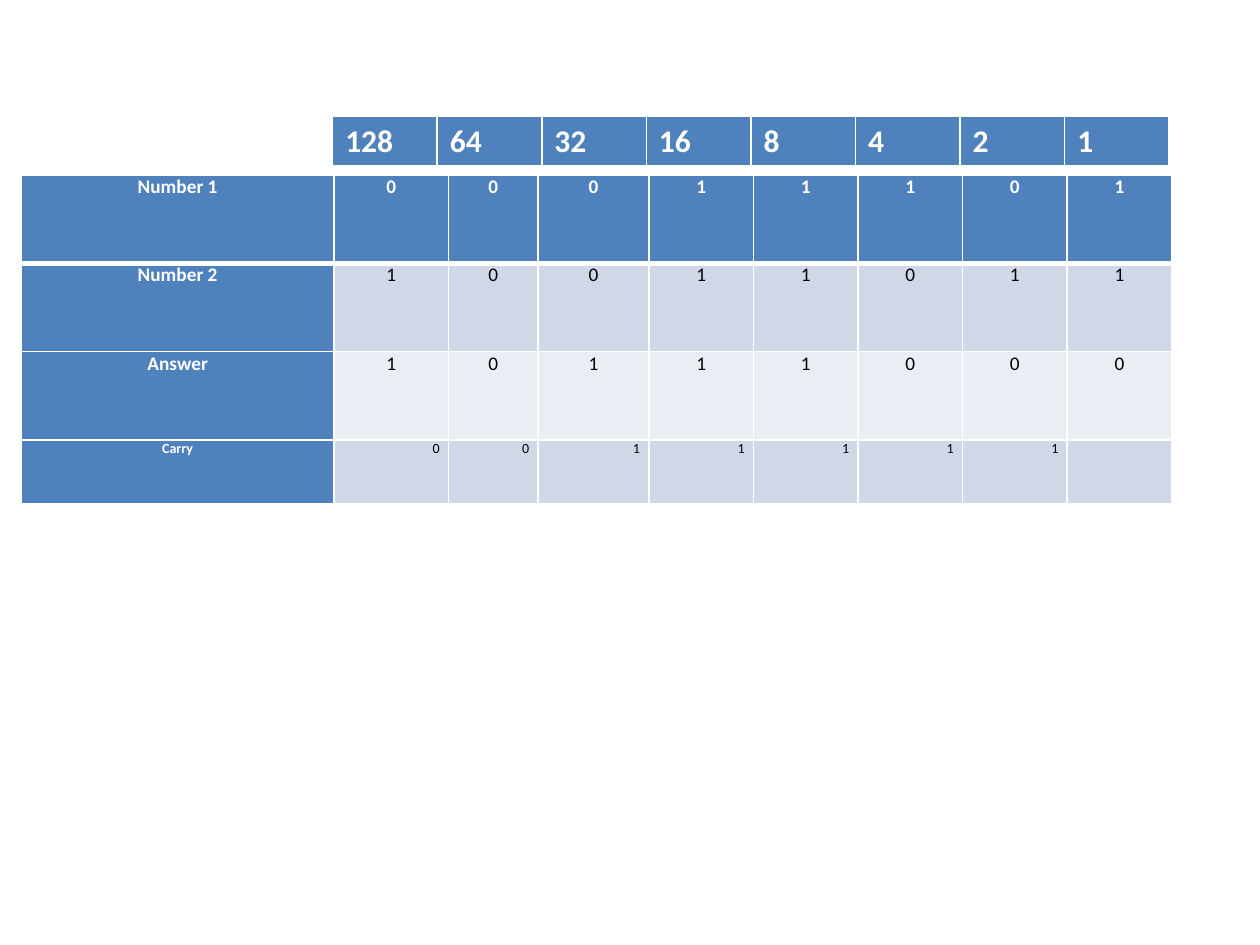
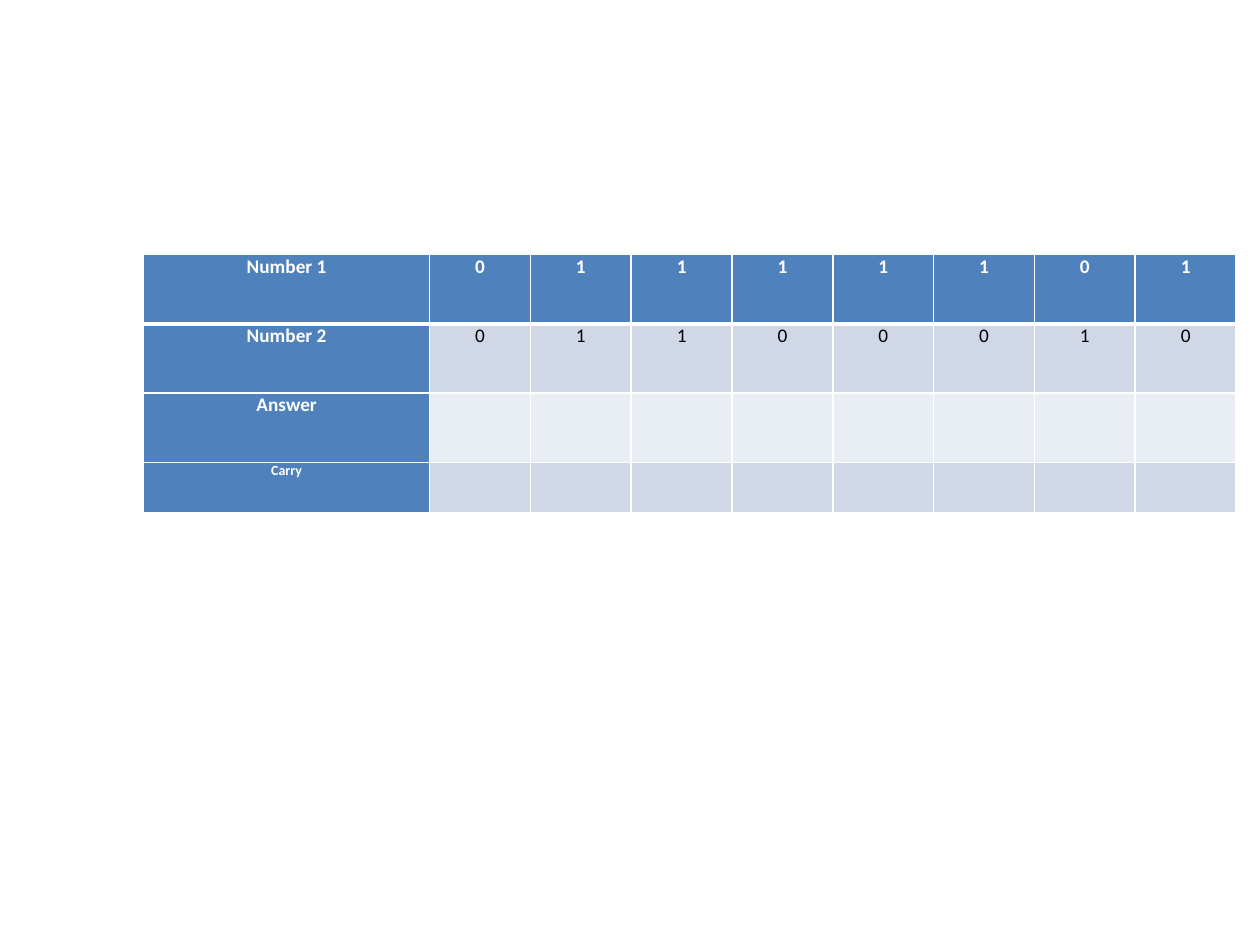
from lxml import etree
from pptx import Presentation
from pptx.dml.color import RGBColor
from pptx.enum.text import PP_ALIGN
from pptx.oxml.ns import qn
from pptx.util import Inches, Pt

LEFT, CENTER, RIGHT = PP_ALIGN.LEFT, PP_ALIGN.CENTER, PP_ALIGN.RIGHT

WHITE = RGBColor(0xFF, 0xFF, 0xFF)
BLACK = RGBColor(0x00, 0x00, 0x00)
BLUE = RGBColor(0x4F, 0x81, 0xBD)
BAND_DARK = RGBColor(0xD0, 0xD8, 0xE8)
BAND_LIGHT = RGBColor(0xE9, 0xED, 0xF4)

FONT = "Calibri"
THIN, THICK = 1, 3
ROW_LABELS = ["Number 1", "Number 2", "Answer", "Carry"]
ROW_FILLS = [BLUE, BAND_DARK, BAND_LIGHT, BAND_DARK]
PLACE_VALUES = [str(2 ** power) for power in range(7, -1, -1)]
BITS = len(PLACE_VALUES)


def set_borders(cell, top, bottom):
    """Draw white rules round a cell; widths are in points."""
    properties = cell._tc.get_or_add_tcPr()
    widths = {"a:lnL": THIN, "a:lnR": THIN, "a:lnT": top, "a:lnB": bottom}
    for tag, width in widths.items():
        line = etree.SubElement(properties, qn(tag), w=str(Pt(width)))
        fill = etree.SubElement(line, qn("a:solidFill"))
        etree.SubElement(fill, qn("a:srgbClr"), val=str(WHITE))


def fill_cell(cell, text, fill, size, align, strong, top=THIN, bottom=THIN):
    set_borders(cell, top, bottom)
    cell.fill.solid()
    cell.fill.fore_color.rgb = fill
    para = cell.text_frame.paragraphs[0]
    para.alignment = align
    if text:
        span = para.add_run()
        span.text = text
        span.font.name = FONT
        span.font.size = Pt(size)
        span.font.bold = strong
        span.font.color.rgb = WHITE if strong else BLACK


def add_grid(slide, left, top, widths, heights):
    """Add an empty table with the given column widths and row heights."""
    frame = slide.shapes.add_table(
        len(heights), len(widths), Inches(left), Inches(top),
        Inches(sum(widths)), Inches(sum(heights)))
    table = frame.table
    for column, width in zip(table.columns, widths):
        column.width = Inches(width)
    for row, height in zip(table.rows, heights):
        row.height = Inches(height)
    return table


def add_place_values(slide, left, top, width, height):
    table = add_grid(slide, left, top, [width] * BITS, [height])
    for cell, value in zip(table.rows[0].cells, PLACE_VALUES):
        fill_cell(cell, value, BLUE, 18, LEFT, True, bottom=THICK)


def add_sum(slide, left, top, widths, heights, bit_rows):
    """Add a binary addition; each bit row is a string, blank when unsolved."""
    table = add_grid(slide, left, top, widths, heights)
    for row, (label, bits) in enumerate(zip(ROW_LABELS, bit_rows)):
        is_carry = label == "Carry"
        size = 8 if is_carry else 11
        texts = [label, *bits.ljust(BITS)]
        for column, text in enumerate(texts):
            cell = table.cell(row, column)
            cell.margin_left = cell.margin_right = Inches(0.07)
            cell.margin_top = cell.margin_bottom = 0
            is_label = column == 0
            fill_cell(
                cell, text.strip(), BLUE if is_label else ROW_FILLS[row], size,
                RIGHT if is_carry and not is_label else CENTER,
                strong=is_label or row == 0,
                top=THICK if row == 1 else THIN,
                bottom=THICK if row == 0 else THIN)


def main():
    deck = Presentation()
    deck.slide_width, deck.slide_height = Inches(10), Inches(7.5)
    blank = deck.slide_layouts[6]

    # Worked example under its place values
    example = deck.slides.add_slide(blank)
    add_sum(example, 0.17, 1.39,
            [2.48, 0.91, 0.71, 0.88] + [0.83] * 5, [0.7] * 3 + [0.51],
            ["00011101", "10011011", "10111000", "0011111"])
    add_place_values(example, 2.64, 0.92, 0.83, 0.41)

    # Exercise left open
    exercise = deck.slides.add_slide(blank)
    add_sum(exercise, 1.14, 2.02,
            [2.27] + [0.8] * BITS, [0.55] * 3 + [0.4],
            ["01111101", "01100010", "", ""])

    deck.save("out.pptx")


if __name__ == "__main__":
    main()
